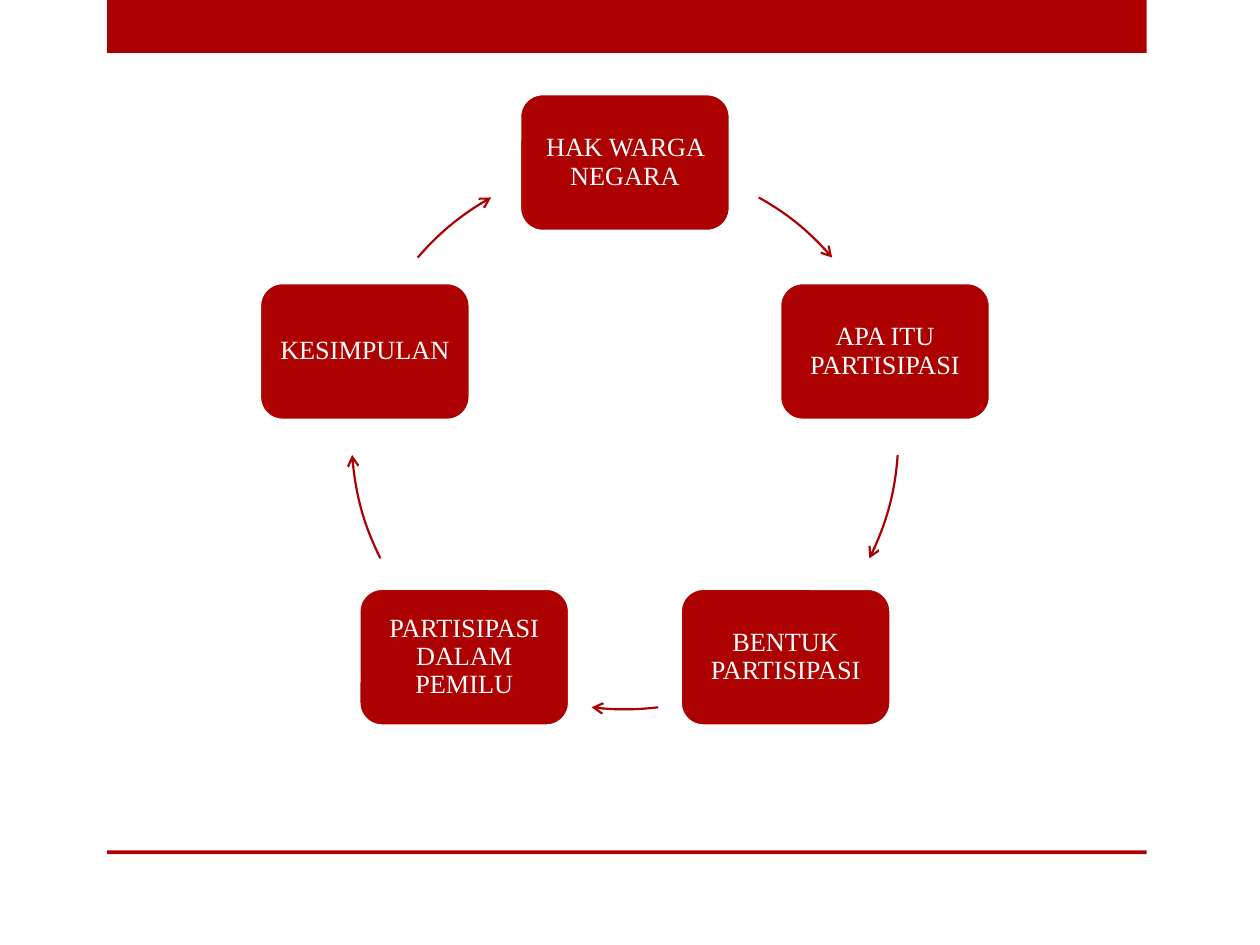
from dataclasses import dataclass
from math import cos, radians, sin

from lxml.etree import SubElement
from pptx import Presentation
from pptx.dml.color import RGBColor
from pptx.enum.shapes import MSO_SHAPE
from pptx.enum.text import MSO_ANCHOR, PP_ALIGN
from pptx.oxml.ns import qn
from pptx.util import Inches, Pt

RED, WHITE = "AD0101", "FFFFFF"
CENTER_X, CENTER_Y, RADIUS = 4.96, 3.46, 2.17
BOX_W, BOX_H = 1.67, 1.09


@dataclass
class Step:
    label: str
    arc_start: float  # degrees clockwise from three o'clock
    arc_end: float


STEPS = [
    Step("HAK WARGA NEGARA", 299.3, 319.3),
    Step("APA ITU PARTISIPASI", 4, 26.6),
    Step("BENTUK PARTISIPASI", 83, 97),
    Step("PARTISIPASI DALAM PEMILU", 153.4, 176),
    Step("KESIMPULAN", 220.7, 240.7),
]


def rgb(value: str) -> RGBColor:
    return RGBColor.from_string(value)


def add_shape(s, kind, x: float, y: float, w: float, h: float,
              fill: str | None = None, line: str | None = None, width: float = 1):
    sp = s.shapes.add_shape(kind, Inches(x), Inches(y), Inches(w), Inches(h))
    sp.shadow.inherit = False
    if fill:
        sp.fill.solid()
        sp.fill.fore_color.rgb = rgb(fill)
    else:
        sp.fill.background()
    if line:
        sp.line.color.rgb = rgb(line)
        sp.line.width = Pt(width)
    else:
        sp.line.fill.background()
    return sp


def set_text(sp, text: str, *, size: float = 15, color: str = WHITE,
             font: str = "Times New Roman", margin: float = 0.06) -> None:
    tf = sp.text_frame
    tf.word_wrap = True
    tf.vertical_anchor = MSO_ANCHOR.MIDDLE
    tf.margin_left = tf.margin_right = Inches(margin)
    tf.margin_top = tf.margin_bottom = Inches(margin)
    p = tf.paragraphs[0]
    p.alignment = PP_ALIGN.CENTER
    p.line_spacing = 0.9
    r = p.add_run()
    r.text = text
    r.font.size = Pt(size)
    r.font.name = font
    r.font.color.rgb = rgb(color)


def add_step_box(s, step: Step, angle: float) -> None:
    x = CENTER_X + RADIUS * cos(radians(angle)) - BOX_W / 2
    y = CENTER_Y + RADIUS * sin(radians(angle)) - BOX_H / 2
    sp = add_shape(s, MSO_SHAPE.ROUNDED_RECTANGLE, x, y, BOX_W, BOX_H,
                   fill=RED, line=WHITE, width=1.75)
    set_text(sp, step.label)


def add_arc_arrow(s, step: Step) -> None:
    sp = add_shape(s, MSO_SHAPE.ARC, CENTER_X - RADIUS, CENTER_Y - RADIUS,
                   2 * RADIUS, 2 * RADIUS, line=RED, width=1.25)
    # Angles are stored in 1/60000 degree, adjustments in 1/100000
    sp.adjustments[0] = step.arc_start * 0.6
    sp.adjustments[1] = step.arc_end * 0.6
    SubElement(sp.line._get_or_add_ln(), qn("a:tailEnd"), type="arrow")


def main() -> None:
    prs = Presentation()
    prs.slide_width, prs.slide_height = Inches(10), Inches(7.5)
    s = prs.slides.add_slide(prs.slide_layouts[6])

    # Top band and bottom rule
    add_shape(s, MSO_SHAPE.RECTANGLE, 0.85, 0, 8.25, 0.42, fill=RED)
    add_shape(s, MSO_SHAPE.RECTANGLE, 0.85, 6.75, 8.25, 0.03, fill=RED)

    # Cycle of topics, clockwise from the top
    for i, step in enumerate(STEPS):
        add_step_box(s, step, -90 + i * 360 / len(STEPS))
        add_arc_arrow(s, step)

    prs.save("out.pptx")


if __name__ == "__main__":
    main()
